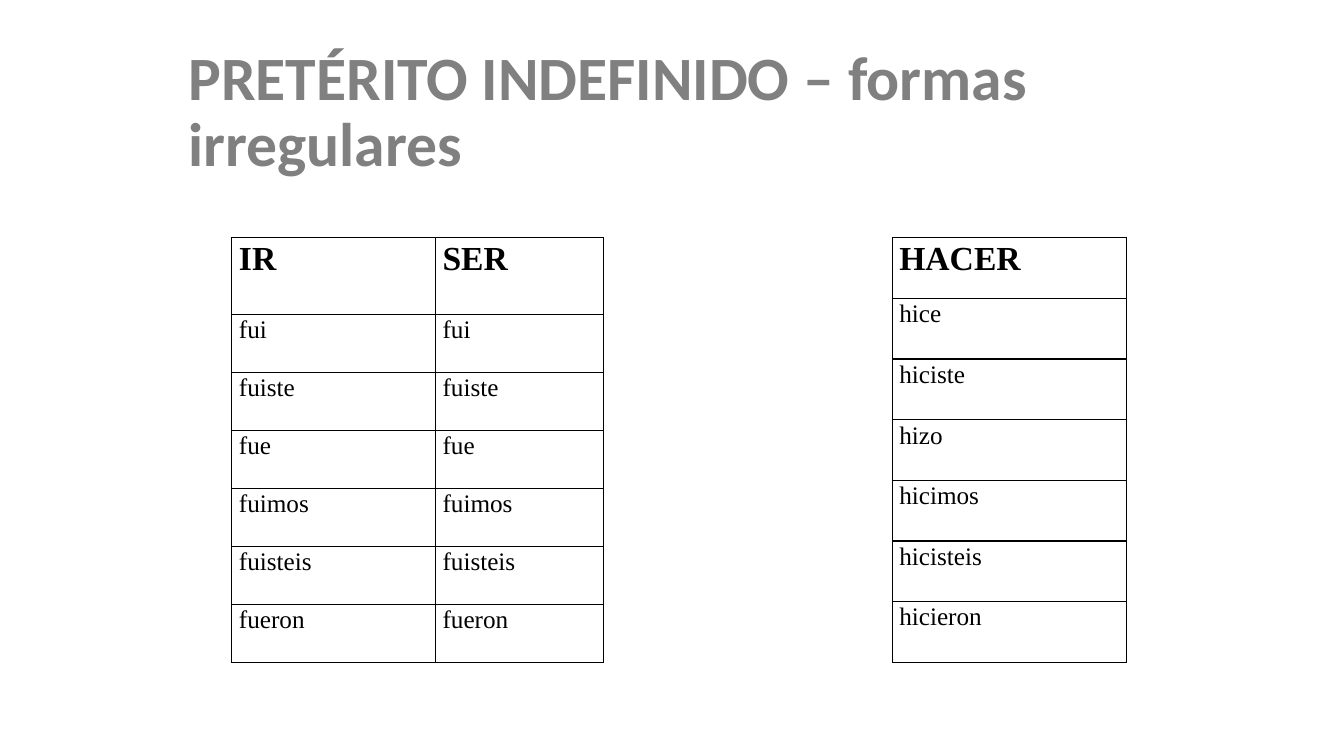
from dataclasses import dataclass
from lxml.etree import SubElement
from pptx import Presentation
from pptx.dml.color import RGBColor
from pptx.enum.text import MSO_ANCHOR
from pptx.oxml.ns import qn
from pptx.util import Inches, Pt

# Content
TITLE = "PRETÉRITO INDEFINIDO – formas irregulares"
GO = ["fui", "fuiste", "fue", "fuimos", "fuisteis", "fueron"]
DO = ["hice", "hiciste", "hizo", "hicimos", "hicisteis", "hicieron"]
# Each table: left edge, head row height, columns of (verb, forms, width)
TABLES = [
    (2.3, 0.76, [("IR", GO, 2.02), ("SER", GO, 1.67)]),
    (8.85, 0.6, [("HACER", DO, 2.32)]),
]
TOP, TALL = 2.36, 4.21


@dataclass(frozen=True)
class Theme:
    gray: str = "808080"
    ink: str = "000000"
    sans: str = "Calibri"
    serif: str = "Times New Roman"
    title: int = 44
    head: int = 24
    body: int = 18
    rule: int = 1


THEME = Theme()


def style(para, face, size, color, bold):
    font = para.font
    font.name, font.size, font.bold = face, Pt(size), bold
    font.color.rgb = RGBColor.from_string(color)


def border(cell):
    props = cell._tc.get_or_add_tcPr()
    for side in ("lnL", "lnR", "lnT", "lnB"):
        line = SubElement(props, qn(f"a:{side}"), w=str(Pt(THEME.rule)))
        fill = SubElement(line, qn("a:solidFill"))
        SubElement(fill, qn("a:srgbClr"), val=THEME.ink)


def write(cell, text, head):
    cell.margin_left = cell.margin_right = Inches(0.07)
    cell.margin_top = cell.margin_bottom = 0
    cell.text = text
    para = cell.text_frame.paragraphs[0]
    para.line_spacing, para.space_after = 1.07, Pt(8)
    size = THEME.head if head else THEME.body
    style(para, THEME.serif, size, THEME.ink, head)
    border(cell)
    cell.fill.background()


def add_verbs(slide, left, first, cols):
    count = len(cols[0][1])
    width = sum(wide for _, _, wide in cols)
    grid = slide.shapes.add_table(
        count + 1, len(cols), Inches(left), Inches(TOP), Inches(width), Inches(TALL)
    ).table
    grid.first_row = grid.horz_banding = False
    # The head row has its own height; the forms share the rest
    for r, row in enumerate(grid.rows):
        row.height = Inches((TALL - first) / count if r else first)
    for c, (verb, forms, wide) in enumerate(cols):
        grid.columns[c].width = Inches(wide)
        for r, text in enumerate([verb, *forms]):
            write(grid.cell(r, c), text, r == 0)


def add_title(slide):
    box = slide.shapes.add_textbox(Inches(1.18), Inches(0.4), Inches(11.23), Inches(1.45))
    frame = box.text_frame
    frame.word_wrap = True
    frame.vertical_anchor = MSO_ANCHOR.MIDDLE
    frame.text = TITLE
    para = frame.paragraphs[0]
    para.line_spacing = 0.9
    para._p.get_or_add_pPr().set("marL", str(Inches(0.59)))
    style(para, THEME.sans, THEME.title, THEME.gray, True)


def main():
    deck = Presentation()
    deck.slide_width, deck.slide_height = Inches(13.33), Inches(7.5)
    slide = deck.slides.add_slide(deck.slide_layouts[6])
    add_title(slide)
    for left, first, cols in TABLES:
        add_verbs(slide, left, first, cols)
    deck.save("out.pptx")


if __name__ == "__main__":
    main()
